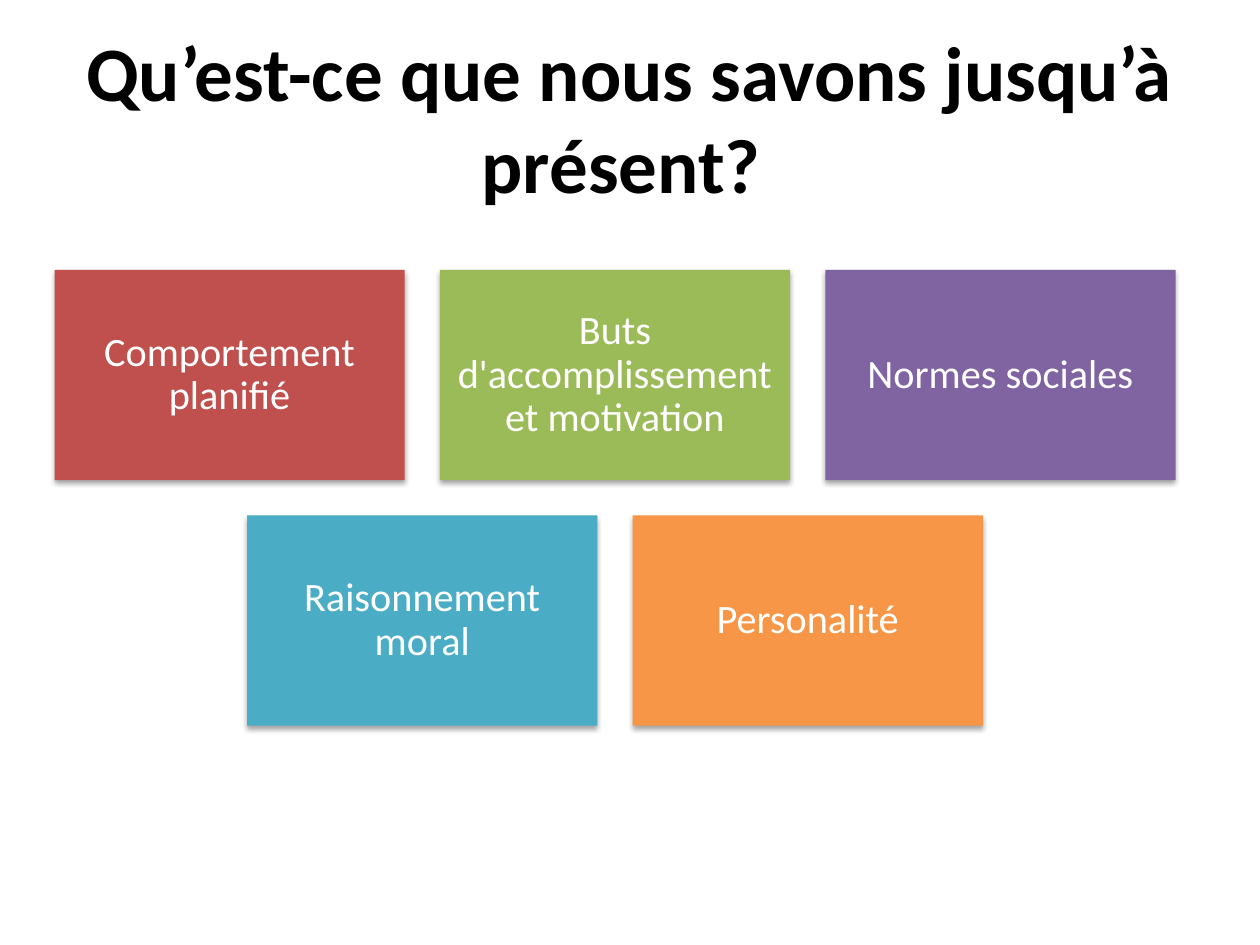
from dataclasses import dataclass

from lxml import etree
from pptx import Presentation
from pptx.dml.color import RGBColor
from pptx.enum.shapes import MSO_SHAPE
from pptx.enum.text import MSO_ANCHOR, PP_ALIGN
from pptx.oxml.ns import qn
from pptx.util import Cm, Pt

RECT = MSO_SHAPE.RECTANGLE
MIDDLE = MSO_ANCHOR.MIDDLE
CENTER = PP_ALIGN.CENTER
FONT = "Calibri"

# Grid of topic cards, in centimetres
CARD_W, CARD_H, GAP = 7.06, 4.24, 0.71
GRID_CENTER, GRID_TOP = 12.4, 5.44


@dataclass
class Topic:
    text: str
    color: str


ROWS = [
    [
        Topic("Comportement planifié", "C0504D"),
        Topic("Buts d'accomplissement et motivation", "9BBB59"),
        Topic("Normes sociales", "8064A2"),
    ],
    [
        Topic("Raisonnement moral", "4BACC6"),
        Topic("Personalité", "F79646"),
    ],
]


def rgb(color: str) -> RGBColor:
    return RGBColor.from_string(color)


def set_text(sp, text: str, size: float, color: str, bold: bool = False):
    """Write one centred paragraph and return it."""
    tf = sp.text_frame
    tf.word_wrap = True
    tf.vertical_anchor = MIDDLE
    tf.text = text
    p = tf.paragraphs[0]
    p.alignment = CENTER
    font = p.runs[0].font
    font.name, font.size, font.bold = FONT, Pt(size), bold
    font.color.rgb = rgb(color)
    return p


def add_shadow(sp) -> None:
    """Give the shape a soft shadow straight below it."""
    sp.shadow.inherit = False
    effects = sp._element.spPr.find(qn("a:effectLst"))
    shadow = etree.SubElement(
        effects, qn("a:outerShdw"), blurRad=str(Pt(3.1)), dist=str(Pt(1.8)),
        dir="5400000", rotWithShape="0")
    black = etree.SubElement(shadow, qn("a:srgbClr"), val="000000")
    etree.SubElement(black, qn("a:alpha"), val="35000")


def add_card(s, topic: Topic, left: float, top: float) -> None:
    sp = s.shapes.add_shape(RECT, Cm(left), Cm(top), Cm(CARD_W), Cm(CARD_H))
    sp.fill.solid()
    sp.fill.fore_color.rgb = rgb(topic.color)
    sp.line.fill.background()
    add_shadow(sp)
    tf = sp.text_frame
    tf.margin_left = tf.margin_right = Cm(0.25)
    tf.margin_top = tf.margin_bottom = Cm(0.25)
    p = set_text(sp, topic.text, 23, "FFFFFF")
    p.line_spacing = 0.9


def main() -> None:
    prs = Presentation()
    prs.slide_width, prs.slide_height = Cm(25.4), Cm(19.05)
    s = prs.slides.add_slide(prs.slide_layouts[6])

    # Title
    title = s.shapes.add_textbox(Cm(1.27), Cm(0.76), Cm(22.86), Cm(3.18))
    set_text(title, "Qu’est-ce que nous savons jusqu’à présent? ", 44, "000000", True)

    # Topic cards, each row centred
    for i, row in enumerate(ROWS):
        row_w = len(row) * (CARD_W + GAP) - GAP
        for j, topic in enumerate(row):
            left = GRID_CENTER - row_w / 2 + j * (CARD_W + GAP)
            add_card(s, topic, left, GRID_TOP + i * (CARD_H + GAP))

    prs.save("out.pptx")


if __name__ == "__main__":
    main()
